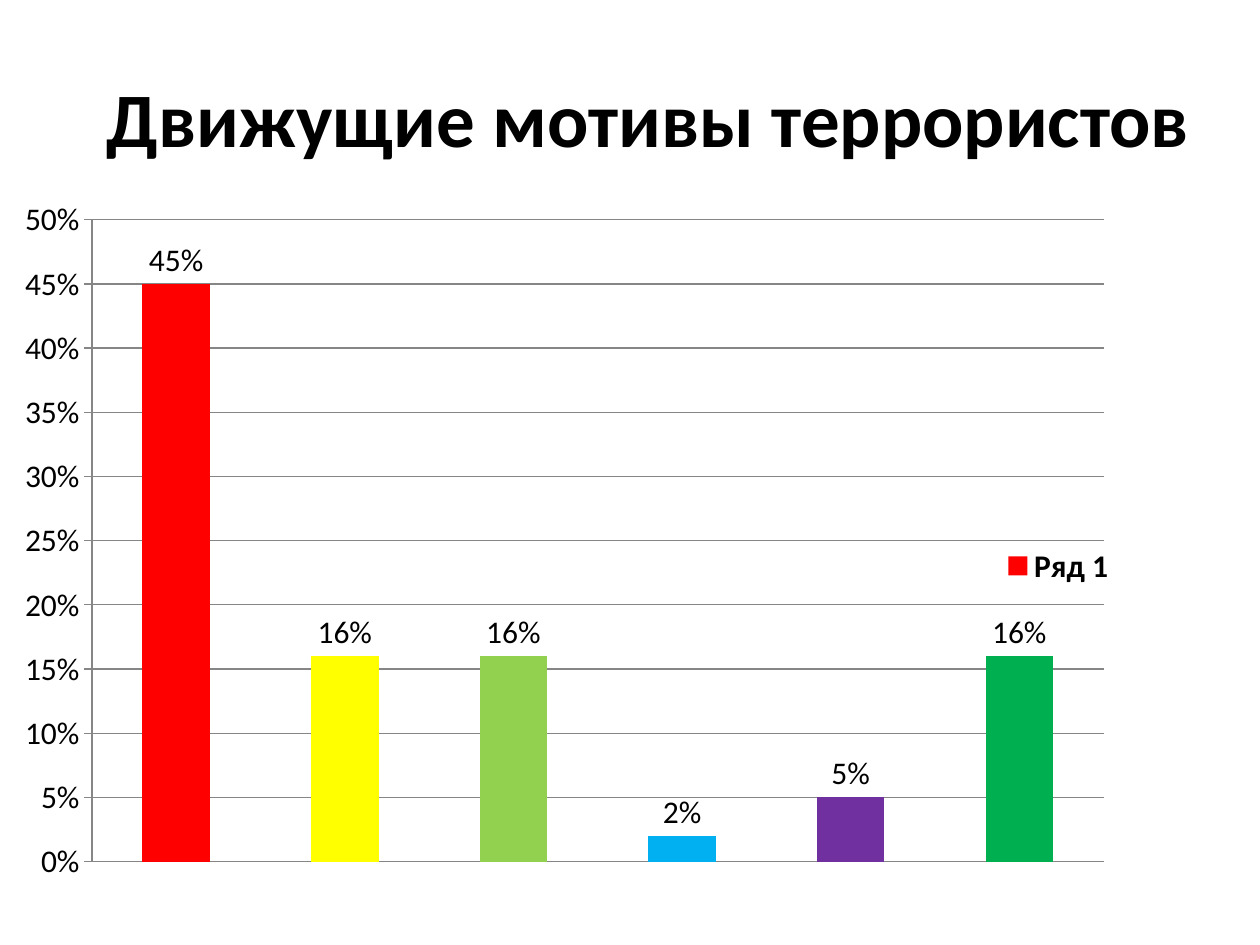
from lxml.etree import SubElement
from pptx import Presentation
from pptx.chart.data import CategoryChartData
from pptx.dml.color import RGBColor
from pptx.enum.chart import XL_CHART_TYPE, XL_LABEL_POSITION, XL_LEGEND_POSITION, XL_TICK_MARK
from pptx.enum.text import MSO_ANCHOR, PP_ALIGN
from pptx.oxml.ns import qn
from pptx.util import Inches, Pt

FONT = "Calibri"
SHARES = [0.45, 0.16, 0.16, 0.02, 0.05, 0.16]
BAR_COLORS = ["FF0000", "FFFF00", "92D050", "00B0F0", "7030A0", "00B050"]


def color(value):
    """Turn a hex string into a colour."""
    return RGBColor.from_string(value)


def style_font(font, size, bold=False):
    """Set the shared font in black."""
    values = {"name": FONT, "size": Pt(size), "bold": bold}
    for name, value in values.items():
        setattr(font, name, value)
    font.color.rgb = color("000000")


def add_title(page, text, left, top, width, height):
    """Add the centred slide title."""
    box = page.shapes.add_textbox(Inches(left), Inches(top), Inches(width), Inches(height))
    frame = box.text_frame
    frame.word_wrap = True
    frame.vertical_anchor = MSO_ANCHOR.MIDDLE
    para = frame.paragraphs[0]
    para.alignment = PP_ALIGN.CENTER
    span = para.add_run()
    span.text = text
    style_font(span.font, 44, bold=True)


def place(element, index, inner=False, **fractions):
    """Fix the place of a chart part in fractions of the chart."""
    for old in element.findall(qn("c:layout")):
        element.remove(old)
    layout = SubElement(element, qn("c:layout"))
    element.insert(index, layout)
    manual = SubElement(layout, qn("c:manualLayout"))
    settings = {"layoutTarget": "inner"} if inner else {}
    settings.update(xMode="edge", yMode="edge", **fractions)
    for name, value in settings.items():
        SubElement(manual, qn(f"c:{name}")).set("val", str(value))


def format_value_axis(axis):
    """Scale the percentage axis and draw its gridlines."""
    values = {"minimum_scale": 0, "maximum_scale": 0.5, "major_unit": 0.05,
              "has_major_gridlines": True, "major_tick_mark": XL_TICK_MARK.CROSS}
    for name, value in values.items():
        setattr(axis, name, value)
    axis.tick_labels.number_format = "0%"
    axis.tick_labels.number_format_is_linked = False
    for line in (axis.format.line, axis.major_gridlines.format.line):
        line.color.rgb = color("868686")
        line.width = Pt(0.75)


def format_bars(plot):
    """Colour every bar and show its value."""
    plot.gap_width = 150
    plot.vary_by_categories = False
    series = plot.series[0]
    series.format.fill.solid()
    series.format.fill.fore_color.rgb = color(BAR_COLORS[0])
    for index, value in enumerate(BAR_COLORS[1:], 1):
        fill = series.points[index].format.fill
        fill.solid()
        fill.fore_color.rgb = color(value)
    values = {"show_value": True, "number_format": "0%", "number_format_is_linked": False,
              "position": XL_LABEL_POSITION.OUTSIDE_END}
    for name, value in values.items():
        setattr(series.data_labels, name, value)


def add_legend(chart):
    """Add the bold legend over the right of the plot."""
    chart.has_legend = True
    legend = chart.legend
    legend.position = XL_LEGEND_POSITION.RIGHT
    legend.include_in_layout = False
    style_font(legend.font, 18, bold=True)
    place(chart.element.find(".//" + qn("c:legend")), 1, x=0.79, y=0.5, w=0.1, h=0.07)


def add_motive_chart(page, left, top, width, height):
    """Add the column chart of motives."""
    data = CategoryChartData(number_format="0%")
    data.categories = [str(number) for number in range(1, len(SHARES) + 1)]
    data.add_series("Ряд 1", SHARES)
    chart = page.shapes.add_chart(XL_CHART_TYPE.COLUMN_CLUSTERED, Inches(left), Inches(top),
                                  Inches(width), Inches(height), data).chart
    chart.has_title = False
    style_font(chart.font, 18)
    chart.category_axis.visible = False
    format_value_axis(chart.value_axis)
    format_bars(chart.plots[0])
    place(chart.element.find(".//" + qn("c:plotArea")), 0, inner=True,
          x=0.073, y=0.047, w=0.803, h=0.905)
    add_legend(chart)


def main():
    """Build and save the slide."""
    deck = Presentation()
    deck.slide_width, deck.slide_height = Inches(10), Inches(7.5)
    page = deck.slides.add_slide(deck.slide_layouts[6])
    add_title(page, "Движущие мотивы террористов", 0.65, 0.3, 9, 1.25)
    add_motive_chart(page, 0, 1.48, 10, 5.63)
    deck.save("out.pptx")


if __name__ == "__main__":
    main()
